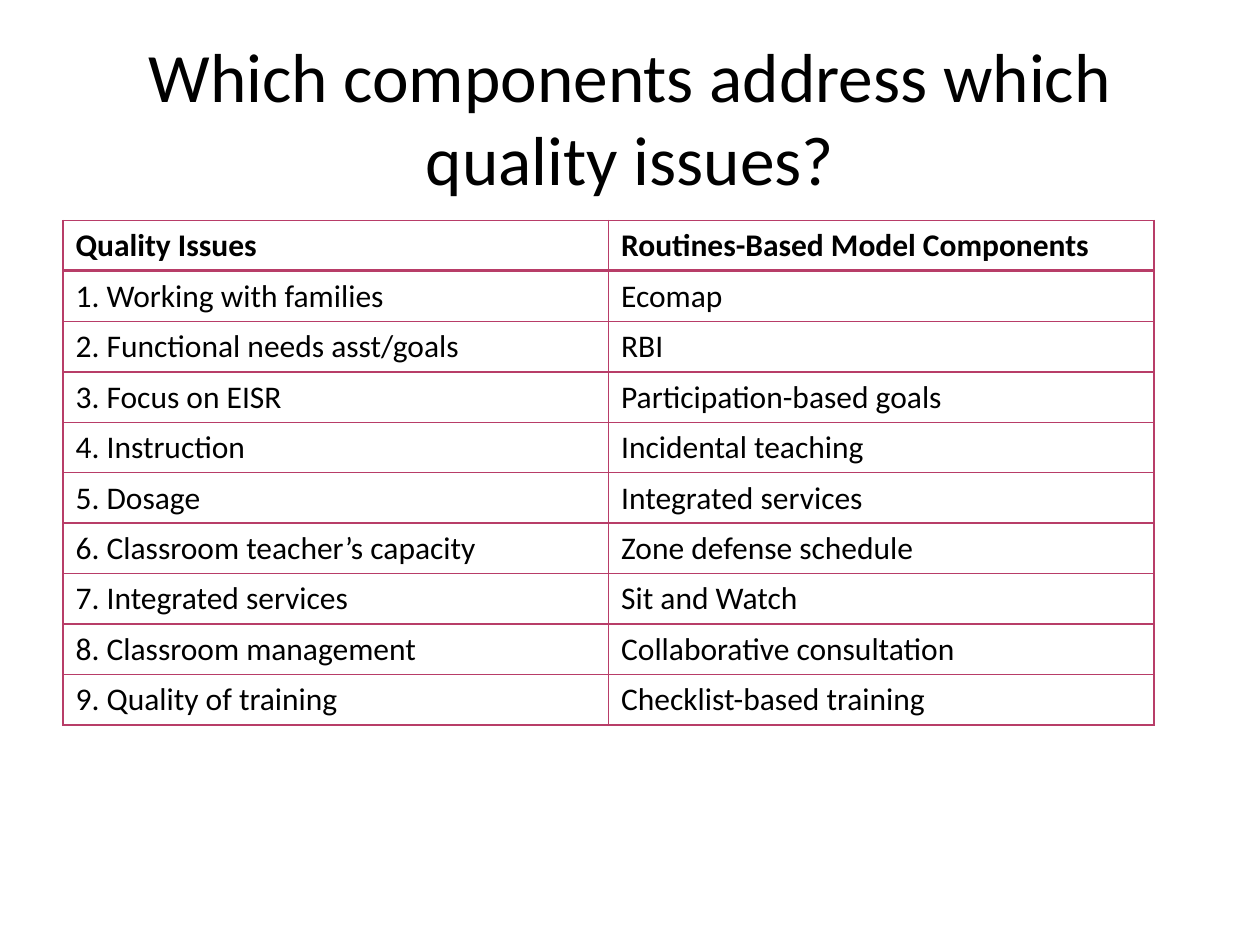
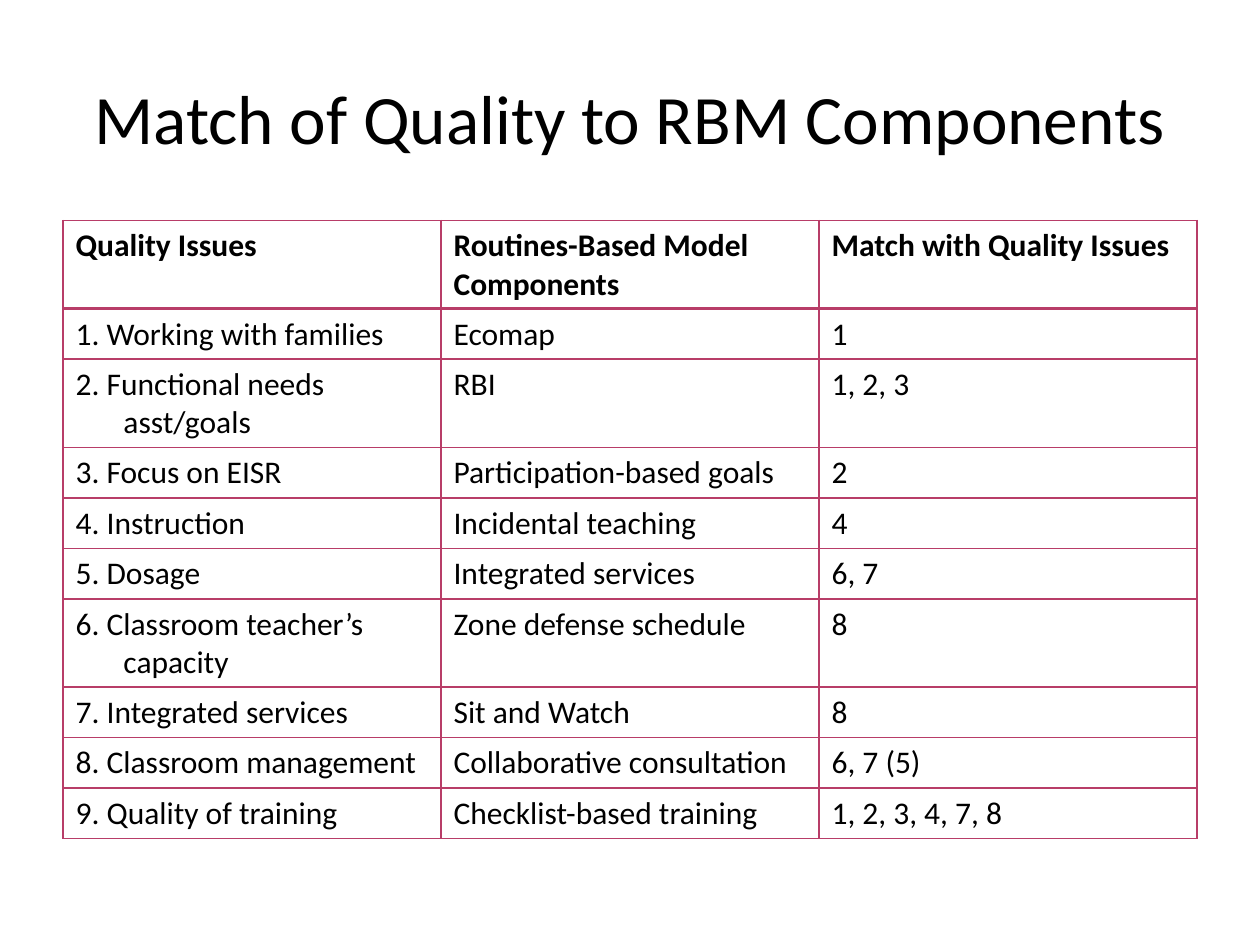
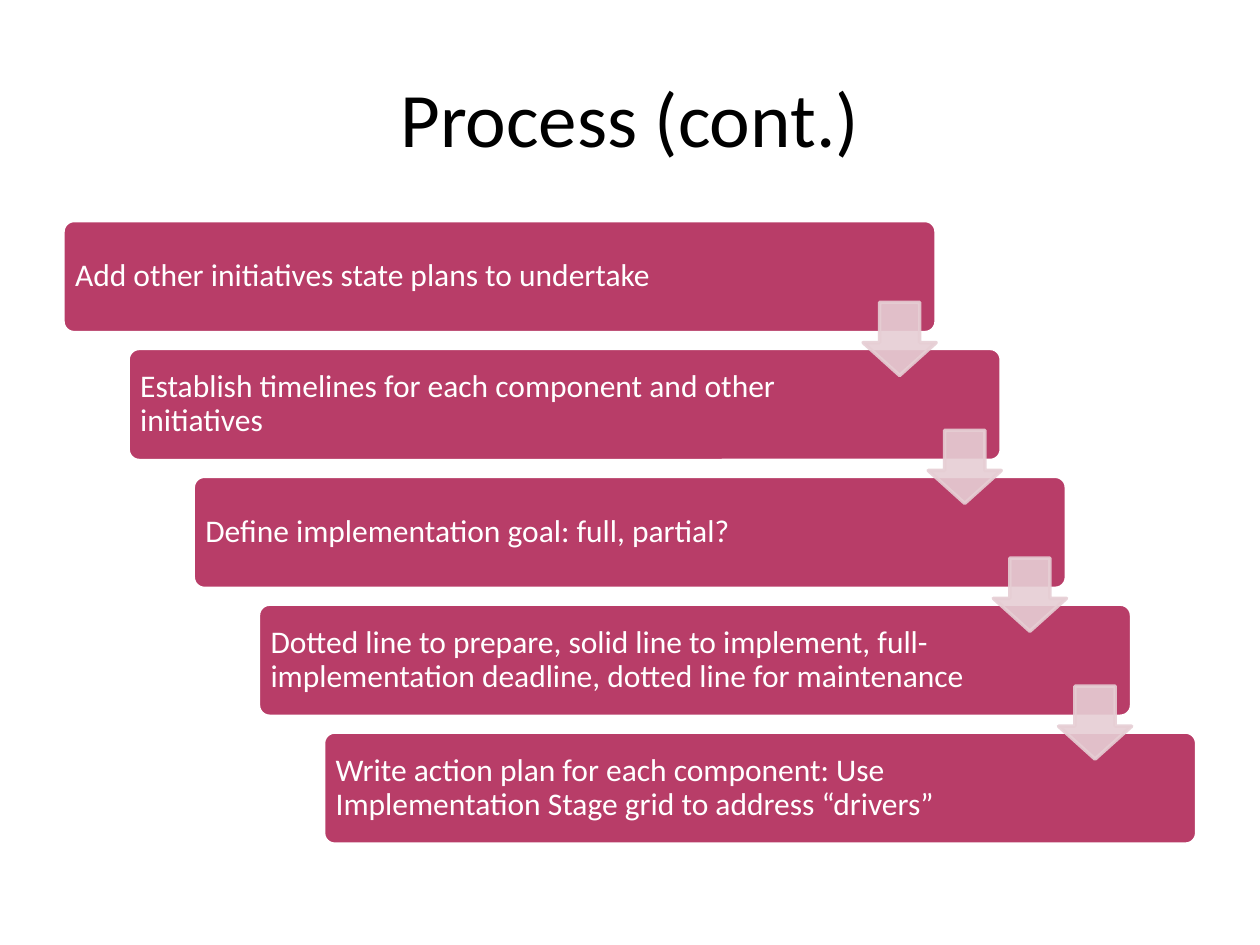
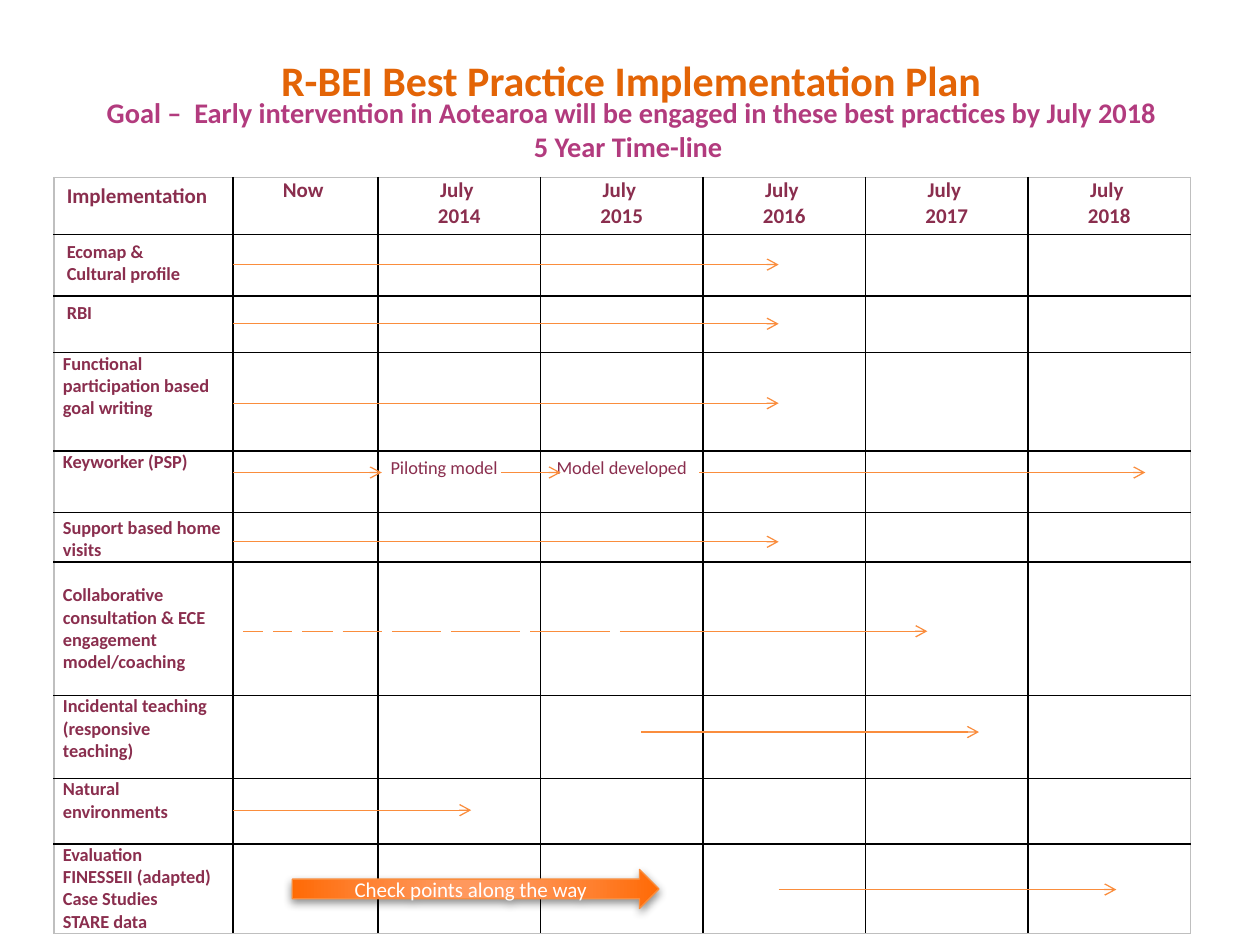
import pptx
import pptx.chart.data
import pptx.dml.color
import pptx.enum.shapes
import pptx.enum.text
import pptx.oxml
import pptx.oxml.ns
import pptx.util

Inches = pptx.util.Inches
Pt = pptx.util.Pt
Shape = pptx.enum.shapes.MSO_SHAPE
Anchor = pptx.enum.text.MSO_ANCHOR
Align = pptx.enum.text.PP_ALIGN
qn = pptx.oxml.ns.qn

FONT = "Calibri"
BLACK, WHITE, GRAY = "000000", "FFFFFF", "BFBFBF"
ROSE, BLUSH, WINE, PLUM = "B83D68", "E6CED4", "8A2E4E", "B23B7E"
RUST, AMBER = "E36406", "FA8D3D"
GLOW = [(0, "FF995F"), (15, "FF985D"), (62, "FF802F"), (97, "FF6C09"), (100, "FD6B00")]

ISSUES = ["Working with families", "Functional needs asst/goals", "Focus on EISR",
          "Instruction", "Dosage", "Classroom teacher’s capacity",
          "Integrated services", "Classroom management", "Quality of training"]
PARTS = ["Ecomap", "RBI", "Participation-based goals", "Incidental teaching",
         "Integrated services", "Zone defense schedule", "Sit and Watch",
         "Collaborative consultation", "Checklist-based training"]
MATCH = ["1", "1, 2, 3", "2", "4", "6, 7", "8", "8", "6, 7 (5)", "1, 2, 3, 4, 7, 8"]
STEPS = ["Add other initiatives state plans to undertake",
         "Establish timelines for each component and other initiatives",
         "Define implementation goal: full, partial?",
         "Dotted line to prepare, solid line to implement, full-implementation "
         "deadline, dotted line for maintenance",
         "Write action plan for each component: Use Implementation Stage grid "
         "to address “drivers”"]
TASKS = ["Ecomap &\nCultural profile", "RBI", "Functional participation based goal writing",
         "Keyworker (PSP)", "Support based home visits",
         "Collaborative consultation & ECE engagement model/coaching",
         "Incidental teaching (responsive teaching)", "Natural environments",
         "Evaluation\nFINESSEII (adapted)\nCase Studies\nSTARE data"]
ARROWS = [(2.1, 1.85, 6.18), (2.57, 1.85, 6.18), (3.2, 1.85, 6.18), (3.75, 1.85, 3.03),
          (3.75, 3.98, 4.45), (3.75, 5.55, 9.09), (4.3, 1.85, 6.18), (5.01, 4.92, 7.36),
          (5.81, 5.09, 7.77), (6.43, 1.85, 3.74), (7.06, 6.18, 8.86)]
DASHES = [(1.93, 2.09), (2.17, 2.32), (2.4, 2.64), (2.72, 3.03),
          (3.11, 3.5), (3.58, 4.13), (4.21, 4.84)]


def tint(code):
    """Turn a hex string into a colour."""
    return pptx.dml.color.RGBColor.from_string(code)


def node(text):
    """Build an XML element in the drawing namespace."""
    head, tail = text.split(" ", 1) if " " in text.split(">")[0] else (text[:-2], "/>")
    return pptx.oxml.parse_xml(f"{head} {pptx.oxml.ns.nsdecls('a')} {tail}")


def write(frame, text, size=18, color=BLACK, bold=False, align=Align.LEFT, hang=0, lead=None):
    """Fill a text frame, one paragraph for each line."""
    for i, line in enumerate(text.split("\n")):
        para = frame.add_paragraph() if i else frame.paragraphs[0]
        para.alignment = align
        if lead:
            para.line_spacing = lead
        if hang:
            props = para._p.get_or_add_pPr()
            props.set("marL", str(Inches(hang)))
            props.set("indent", str(-Inches(hang)))
        run = para.add_run()
        run.text = line
        run.font.name, run.font.size, run.font.bold = FONT, Pt(size), bold
        run.font.color.rgb = tint(color)


def pad(box, left=0.1, top=0.05, right=0.1, low=0.05):
    """Set the inner margins of a frame or cell."""
    box.margin_left, box.margin_top = Inches(left), Inches(top)
    box.margin_right, box.margin_bottom = Inches(right), Inches(low)


class Deck:
    """Holds the shared style and the current slide."""

    def __init__(self):
        """Start an empty deck."""
        self.show = pptx.Presentation()
        self.show.slide_width, self.show.slide_height = Inches(10), Inches(7.5)
        self.slide = None

    def page(self, title=None, size=39.6):
        """Add a slide, with a title if there is one."""
        self.slide = self.show.slides.add_slide(self.show.slide_layouts[6])
        if title:
            self.label(title, (0.5, 0.3, 9, 1.25), size=size)

    def label(self, text, place, inset=(), **look):
        """Add a centred text box."""
        frame = self.slide.shapes.add_textbox(*map(Inches, place)).text_frame
        frame.word_wrap = True
        frame.vertical_anchor = Anchor.MIDDLE
        pad(frame, *inset)
        write(frame, text, align=Align.CENTER, **look)

    def block(self, kind, place, fill, line, width=2, tweak=()):
        """Add a filled preset shape."""
        shape = self.slide.shapes.add_shape(kind, *map(Inches, place))
        shape.shadow.inherit = False
        shape.fill.solid()
        shape.fill.fore_color.rgb = tint(fill)
        shape.line.color.rgb = tint(line)
        shape.line.width = Pt(width)
        for i, value in enumerate(tweak):
            shape.adjustments[i] = value
        shape.text_frame.word_wrap = True
        shape.text_frame.vertical_anchor = Anchor.MIDDLE
        return shape

    def line(self, y, start, end, arrow=True):
        """Add a level line, with an arrowhead at its end."""
        link = self.slide.shapes.add_connector(
            pptx.enum.shapes.MSO_CONNECTOR.STRAIGHT, *map(Inches, (start, y, end, y)))
        link.line.color.rgb = tint(AMBER)
        link.line.width = Pt(0.75)
        if arrow:
            link.line._get_or_add_ln().append(node('<a:tailEnd type="arrow"/>'))
        link._element.spPr.append(node("<a:effectLst/>"))

    def table(self, data, left, top, cols, rows, look, edge):
        """Add a table; look and edge give each cell's format and borders."""
        size = map(Inches, (left, top, sum(cols), sum(rows)))
        grid = self.slide.shapes.add_table(len(rows), len(cols), *size).table
        grid.first_row = grid.horz_banding = False
        for i, width in enumerate(cols):
            grid.columns[i].width = Inches(width)
        for r, height in enumerate(rows):
            grid.rows[r].height = Inches(height)
            for c, text in enumerate(data[r]):
                cell = grid.cell(r, c)
                style = look(r, c)
                pad(cell, *(style.pop("inset", ()) if text else (0, 0, 0, 0)))
                cell.vertical_anchor = style.pop("anchor", Anchor.TOP)
                if text:
                    write(cell.text_frame, text, **style)
                for side in "LRTB":
                    color, width = edge(r, c, side)
                    cell._tc.get_or_add_tcPr().append(node(
                        f'<a:ln{side} w="{Pt(width)}"><a:solidFill><a:srgbClr val="{color}"/>'
                        f'</a:solidFill></a:ln{side}>'))
                cell.fill.background()


def match(deck, cols, rows, *extra):
    """Add the table of quality issues."""
    head = ["Quality Issues", "Routines-Based Model Components", "Match with Quality Issues"]
    issues = [f"{i}. {text}" for i, text in enumerate(ISSUES, 1)]
    data = [head[:len(cols)], *zip(issues, PARTS, *extra)]

    def look(r, c):
        """Bold head, hanging first column."""
        return {"bold": r == 0, "hang": 0.38 if r and c == 0 else 0}

    def edge(r, c, side):
        """Rose borders, heavier under the head."""
        return ROSE, 2 if (r, side) in ((0, "B"), (1, "T")) else 1

    deck.table(data, 0.5, 1.75, cols, rows, look, edge)


def steps(deck):
    """Add the staircase of steps and the arrows between them."""
    over, down = 0.517, 1.015
    for i, text in enumerate(STEPS):
        place = (0.5 + over * i, 1.75 + down * i, 6.93, 0.89)
        frame = deck.block(Shape.ROUNDED_RECTANGLE, place, ROSE, WHITE, tweak=[0.1]).text_frame
        pad(frame, 0.07, 0.07, 1.17, 0.07)
        write(frame, text, color=WHITE, lead=0.9)
    for i in range(len(STEPS) - 1):
        place = (6.85 + over * i, 2.4 + down * i, 0.58, 0.58)
        arrow = deck.block(Shape.DOWN_ARROW, place, BLUSH, BLUSH, tweak=[0.55, 0.45])
        for color in arrow._element.spPr.iter(qn("a:srgbClr")):
            color.append(node('<a:alpha val="90000"/>'))


def plan(deck):
    """Add the five-year plan."""
    deck.label("Goal –  Early intervention in Aotearoa will be engaged in these best practices "
               "by July 2018\n5 Year Time-line ", (0.51, 0.92, 9, 0.39),
               inset=(0.1, 0.05, 0.1, 0.23), size=16.2, color=PLUM, bold=True)
    years = [f"July \n{year}" for year in range(2014, 2019)]
    data = [["Implementation", "Now ", *years]] + [[task] + [""] * 6 for task in TASKS]
    data[4][2:4] = "Piloting model", "Model developed"
    cols = [1.42, 1.15] + [1.29] * 5
    rows = [0.45, 0.49, 0.45, 0.78, 0.49, 0.39, 1.06, 0.66, 0.52, 0.71]

    def look(r, c):
        """Format by row and column."""
        style = {"size": 10.5 if r else 12, "color": WINE, "bold": r == 0 or c == 0}
        if (r == 0 and c) or (r, c) == (4, 3):
            style["align"] = Align.CENTER
        if (r == 0 and c) or (r > 2 and c == 0):
            style["inset"] = (0.07, 0.18 if r == 6 else 0, 0.07, 0)
        if r == 5:
            style["anchor"] = Anchor.BOTTOM
        return style

    def edge(r, c, side):
        """Black rules inside a gray frame."""
        outer = {"L": c == 0, "R": c == len(cols) - 1, "T": r == 0, "B": r == len(rows) - 1}
        return GRAY if outer[side] else BLACK, 1

    deck.table(data, 0.43, 1.41, cols, rows, look, edge)
    deck.label("R-BEI Best Practice Implementation Plan", (0.51, 0.21, 9, 0.85),
               size=24, color=RUST, bold=True)
    for y, start, end in ARROWS:
        deck.line(y, start, end)
    for start, end in DASHES:
        deck.line(5.01, start, end, arrow=False)
    check(deck)


def check(deck):
    """Add the glowing check point arrow."""
    arrow = deck.block(Shape.RIGHT_ARROW, (2.32, 6.9, 2.91, 0.31), AMBER, AMBER, 0.75)
    write(arrow.text_frame, "Check points along the way", size=12, color=WHITE,
          align=Align.CENTER)
    props = arrow._element.spPr
    stops = "".join(f'<a:gs pos="{at * 1000}"><a:srgbClr val="{color}"/></a:gs>'
                    for at, color in GLOW)
    props.replace(props.find(qn("a:solidFill")), node(
        f'<a:gradFill rotWithShape="1"><a:gsLst>{stops}</a:gsLst><a:path path="circle">'
        '<a:fillToRect l="50000" t="50000" r="50000" b="50000"/></a:path></a:gradFill>'))
    props.find(qn("a:effectLst")).append(node(
        f'<a:outerShdw blurRad="{Pt(5)}" dist="{Pt(2)}" dir="5400000" rotWithShape="0">'
        f'<a:srgbClr val="{BLACK}"><a:alpha val="43000"/></a:srgbClr></a:outerShdw>'))


def main():
    """Build and save the deck."""
    deck = Deck()
    deck.page("Which components address which quality issues?")
    match(deck, [4.33] * 2, [0.4] * 10)
    deck.page("Match of Quality to RBM Components")
    match(deck, [3] * 3, [0.7 if r in (0, 2, 6) else 0.4 for r in range(10)], MATCH)
    deck.page("Process (cont.)", size=44)
    steps(deck)
    deck.page()
    plan(deck)
    deck.show.save("out.pptx")


if __name__ == "__main__":
    main()
